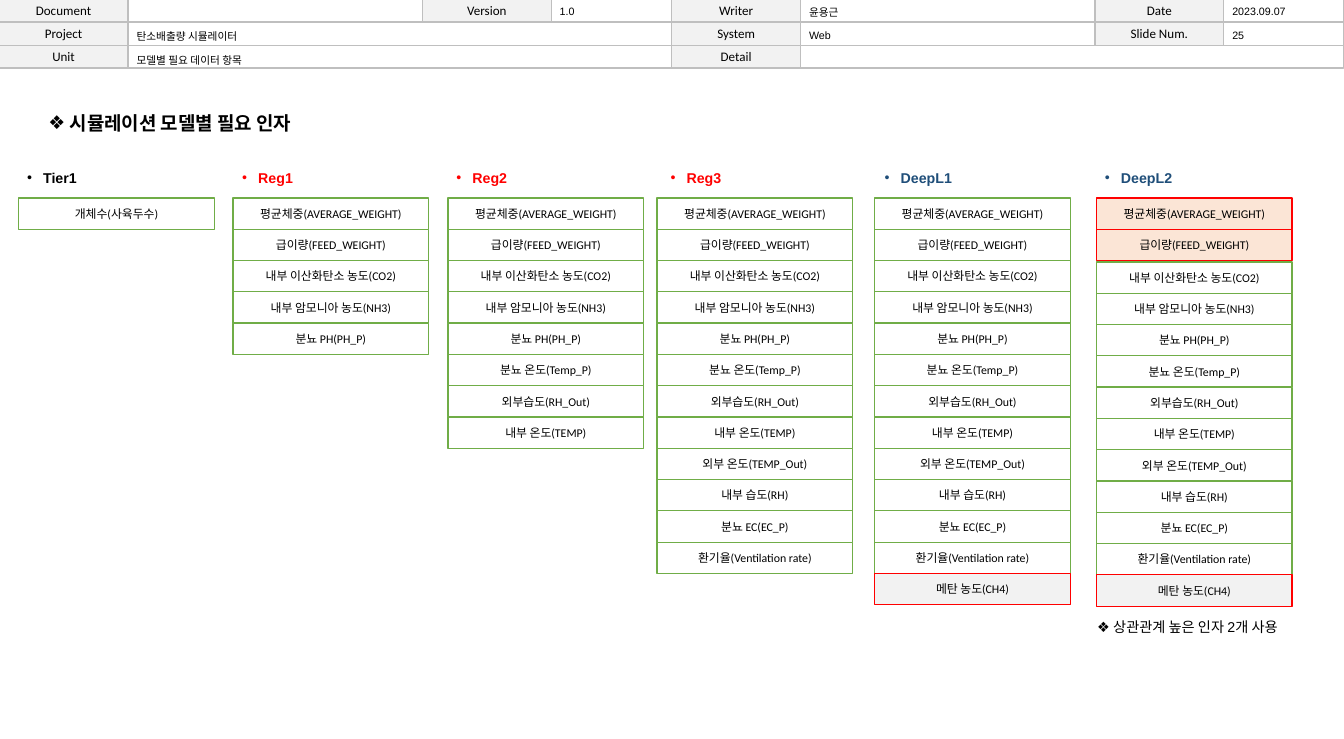
from itertools import accumulate

from lxml import etree
from pptx import Presentation
from pptx.dml.color import RGBColor
from pptx.enum.shapes import MSO_SHAPE
from pptx.enum.text import MSO_ANCHOR, MSO_AUTO_SIZE, PP_ALIGN
from pptx.oxml.ns import qn
from pptx.util import Pt

RECT = MSO_SHAPE.RECTANGLE
MIDDLE = MSO_ANCHOR.MIDDLE
CENTER = PP_ALIGN.CENTER
GROW = MSO_AUTO_SIZE.SHAPE_TO_FIT_TEXT
PLAIN = "{2D5ABB26-0587-4C30-8999-92F81FD0307C}"  # table style without grid

COLORS = {
    "black": "000000", "white": "FFFFFF", "gray": "F2F2F2", "rule": "BFBFBF",
    "green": "70AD47", "red": "FF0000", "navy": "1F4E79", "peach": "FBE5D6",
}

# Header: label and value by (row, column)
WIDTHS = [108, 249.1, 108, 102.4] * 2
LABELS = {
    (0, 0): "Document", (0, 2): "Version", (0, 4): "Writer", (0, 6): "Date",
    (1, 0): "Project", (1, 4): "System", (1, 6): "Slide Num.",
    (2, 0): "Unit", (2, 4): "Detail",
}
VALUES = {
    (0, 3): "1.0", (0, 5): "윤용근", (0, 7): "2023.09.07",
    (1, 1): "탄소배출량 시뮬레이터", (1, 5): "Web", (1, 7): "25",
    (2, 1): "모델별 필요 데이터 항목",
}
SPANS = [(1, 1), (2, 1), (2, 5)]

# Each model takes the first so many factors
FACTORS = [
    "평균체중(AVERAGE_WEIGHT)", "급이량(FEED_WEIGHT)", "내부 이산화탄소 농도(CO2)",
    "내부 암모니아 농도(NH3)", "분뇨 PH(PH_P)", "분뇨 온도(Temp_P)",
    "외부습도(RH_Out)", "내부 온도(TEMP)", "외부 온도(TEMP_Out)", "내부 습도(RH)",
    "분뇨 EC(EC_P)", "환기율(Ventilation rate)", "메탄 농도(CH4)",
]
GAS = {12: "gray"}
# name, color, heading left, heading width, stack left, factors, marked rows
MODELS = [
    ("Tier1", "black", 15.8, 57, 15.8, ["개체수(사육두수)"], {}),
    ("Reg1", "red", 197.3, 57, 196.6, FACTORS[:5], {}),
    ("Reg2", "red", 378, 57, 378, FACTORS[:8], {}),
    ("Reg3", "red", 558.7, 57, 554.4, FACTORS[:12], {}),
    ("DeepL1", "navy", 739.4, 71, 738, FACTORS, GAS),
    ("DeepL2", "navy", 925.2, 71, 925.2, FACTORS, {0: "peach", 1: "peach", **GAS}),
]


def rgb(name):
    return RGBColor.from_string(COLORS[name])


def add_run(para, text, size, font, color="black", bold=False):
    run = para.add_run()
    run.text = text
    run.font.size = Pt(size)
    run.font.name = font
    run.font.bold = bold
    run.font.color.rgb = rgb(color)


def add_box(slide, box, fill, line, text="", size=10):
    shape = slide.shapes.add_shape(RECT, *map(Pt, box))
    shape.shadow.inherit = False
    if fill:
        shape.fill.solid()
        shape.fill.fore_color.rgb = rgb(fill)
    else:
        shape.fill.background()
    shape.line.color.rgb = rgb(line)
    shape.line.width = Pt(1)
    if text:
        shape.text_frame.vertical_anchor = MIDDLE
        para = shape.text_frame.paragraphs[0]
        para.alignment = CENTER
        add_run(para, text, size, "Calibri")


def add_note(slide, box, mark, text, size, color="black", bold=False):
    frame = slide.shapes.add_textbox(*map(Pt, box)).text_frame
    frame.word_wrap = False
    frame.auto_size = GROW
    para = frame.paragraphs[0]
    props = para._p.get_or_add_pPr()
    props.set("marL", str(Pt(13.5)))
    props.set("indent", str(-Pt(13.5)))
    etree.SubElement(props, qn("a:buFont")).set("typeface", "Arial")
    etree.SubElement(props, qn("a:buChar")).set("char", mark)
    add_run(para, text, size, "Arial", color, bold)


def add_frame(slide, box):
    """Header bands and their gray labels."""
    left, top, width, height = box
    step = height / 3
    for side in (left, left + width / 2):
        for row in range(3):
            add_box(slide, (side, top + row * step, width / 2, step), None, "rule")
    lefts = [0, *accumulate(WIDTHS)]
    for (row, col), text in LABELS.items():
        place = (left + lefts[col], top + row * step, 108.7, step)
        add_box(slide, place, "gray", "rule", text, 11)


def add_values(slide, box):
    """Header values, laid over the bands."""
    table = slide.shapes.add_table(3, len(WIDTHS), *map(Pt, box)).table
    table.first_row = table.horz_banding = False
    table._tbl.tblPr.find(qn("a:tableStyleId")).text = PLAIN
    for col, width in zip(table.columns, WIDTHS):
        col.width = Pt(width)
    for row, col in SPANS:
        table.cell(row, col).merge(table.cell(row, col + 2))
    for row in range(3):
        for col in range(len(WIDTHS)):
            cell = table.cell(row, col)
            cell.fill.background()
            cell.vertical_anchor = MIDDLE
            para = cell.text_frame.paragraphs[0]
            if (row, col) in VALUES:
                add_run(para, VALUES[row, col], 9, "Arial")
            else:
                para._p.get_or_add_endParaRPr().set("sz", "900")


def add_stack(slide, box, items, marks):
    """Factors of one model; box gives the first row."""
    left, top, width, height = box
    for row, text in enumerate(items):
        fill = marks.get(row, "white")
        line = "red" if row in marks else "green"
        add_box(slide, (left, top, width, height), fill, line, text)
        top += height
        # Set the marked pair apart from the rest
        if fill == "peach" and marks.get(row + 1) != "peach":
            top += 1.2


def main():
    prs = Presentation()
    prs.slide_width, prs.slide_height = Pt(1134), Pt(623.5)
    slide = prs.slides.add_slide(prs.slide_layouts[6])

    # Header
    add_frame(slide, (-0.7, -0.7, 1134, 58.2))
    add_values(slide, (0, 0, 1134, 56.7))

    # Title
    add_note(slide, (33.8, 90.7, 245.5, 26.6), "❖",
             " 시뮬레이션 모델별 필요 인자", 16, bold=True)

    # Models
    for name, color, head, width, left, items, marks in MODELS:
        add_note(slide, (head, 139, width, 21.8), "•", name, 12, color, True)
        add_stack(slide, (left, 167, 165, 26.4), items, marks)

    # Remark
    add_note(slide, (918.7, 518.4, 185, 21.8), "❖", "상관관계 높은 인자 2개 사용", 12)
    prs.save("out.pptx")


if __name__ == "__main__":
    main()
